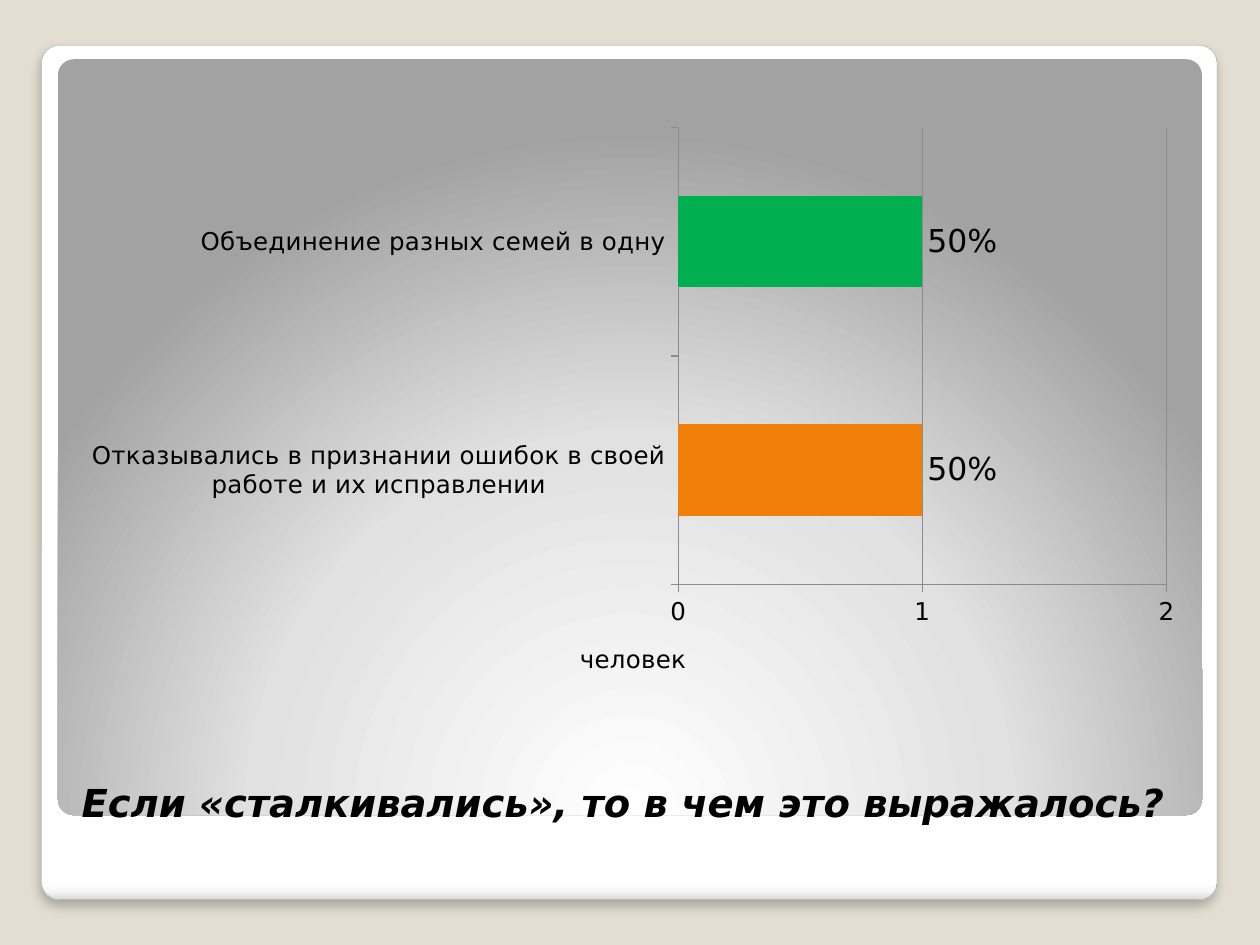
from lxml import etree
from pptx import Presentation
from pptx.chart.data import CategoryChartData
from pptx.dml.color import RGBColor as RGB
from pptx.enum.chart import XL_CHART_TYPE as CT, XL_LABEL_POSITION as LP, XL_TICK_MARK as TM
from pptx.enum.shapes import MSO_SHAPE as SHAPE
from pptx.enum.text import MSO_ANCHOR as ANCHOR
from pptx.oxml.ns import nsdecls
from pptx.util import Inches, Pt

THEME = {
    "font": "DejaVu Sans", "title": Pt(22), "label": Pt(18), "axis": Pt(14),
    "text": RGB(0, 0, 0), "bg": RGB.from_string("E3DED1"),
    "edge": RGB.from_string("A4A4A4"), "grid": RGB.from_string("8B8B8B"),
    "orange": RGB.from_string("F07F09"), "green": RGB.from_string("00B050"),
    "frame": [(0, "FFFFFF"), (98, "FFFFFF"), (99, "F7F7F7"), (100, "DADADA")],
    "panel": [(0, "FFFFFF"), (55, "E1E1E1"), (100, "A2A2A2")],
}
LINEAR = '<a:lin ang="5400000" scaled="0"/>'
RADIAL = ('<a:path path="circle"><a:fillToRect l="50000" t="175000" '
          'r="50000" b="-75000"/></a:path>')


def add_card(box, stops, direction):
    sp = s.shapes.add_shape(SHAPE.ROUNDED_RECTANGLE, *map(Inches, box))
    sp.adjustments[0] = 0.021
    sp.shadow.inherit = False
    sp.line.fill.background()
    gs = "".join(f'<a:gs pos="{pos * 1000}"><a:srgbClr val="{color}"/></a:gs>'
                 for pos, color in stops)
    grad = etree.fromstring(f'<a:gradFill {nsdecls("a")} rotWithShape="1">'
                            f'<a:gsLst>{gs}</a:gsLst>{direction}</a:gradFill>')
    sp._element.spPr.find("{*}prstGeom").addnext(grad)
    return sp


def style_font(font, size, **extra):
    values = {"name": THEME["font"], "size": THEME[size], **extra}
    for name, value in values.items():
        setattr(font, name, value)
    font.color.rgb = THEME["text"]


prs = Presentation()
prs.slide_width, prs.slide_height = Inches(10), Inches(7.5)
s = prs.slides.add_slide(prs.slide_layouts[6])
s.background.fill.solid()
s.background.fill.fore_color.rgb = THEME["bg"]

frame = add_card((0.33, 0.36, 9.33, 6.78), THEME["frame"], LINEAR)
frame.line.color.rgb = THEME["edge"]
frame.line.width = Pt(0.16)
frame._element.spPr.find("{*}effectLst").append(etree.fromstring(
    f'<a:outerShdw {nsdecls("a")} blurRad="{Pt(6)}" dist="{Pt(4)}" dir="5400000" '
    'algn="t" rotWithShape="0"><a:srgbClr val="000000"><a:alpha val="25000"/>'
    '</a:srgbClr></a:outerShdw>'))
add_card((0.46, 0.47, 9.08, 6), THEME["panel"], RADIAL)

title = s.shapes.add_textbox(Inches(0.55), Inches(5.88), Inches(8.95), Inches(0.72))
tf = title.text_frame
tf.word_wrap = True
tf.vertical_anchor = ANCHOR.BOTTOM
r = tf.paragraphs[0].add_run()
r.text = "Если «сталкивались», то в чем это выражалось?"
style_font(r.font, "title", bold=True, italic=True)

data = CategoryChartData()
data.categories = ["Отказывались в признании ошибок в своей работе и их исправлении",
                   "Объединение разных семей в одну"]
data.add_series("Series 1", [1, 1])
chart = s.shapes.add_chart(CT.BAR_CLUSTERED, Inches(0.55), Inches(0.92),
                           Inches(8.95), Inches(4.65), data).chart
chart.has_legend = chart.has_title = False
style_font(chart.font, "label")

plot = chart.plots[0]
plot.gap_width = 150
plot.vary_by_categories = False
series = plot.series[0]
for i, color in enumerate(["orange", "green"]):
    point = series.points[i]
    point.format.fill.solid()
    point.format.fill.fore_color.rgb = THEME[color]
    r = point.data_label.text_frame.paragraphs[0].add_run()
    r.text = "50%"
    style_font(r.font, "label")
    point.data_label.position = LP.OUTSIDE_END

cat_axis, val_axis = chart.category_axis, chart.value_axis
for axis in (cat_axis, val_axis):
    axis.major_tick_mark = TM.OUTSIDE
    axis.minor_tick_mark = TM.NONE
    axis.format.line.color.rgb = THEME["grid"]
    style_font(axis.tick_labels.font, "axis", bold=False)
cat_axis.has_major_gridlines = False
val_axis.has_major_gridlines = True
val_axis.major_gridlines.format.line.color.rgb = THEME["grid"]
val_axis.major_unit = 1
r = val_axis.axis_title.text_frame.paragraphs[0].add_run()
r.text = "человек"
style_font(r.font, "axis", bold=False)

prs.save("out.pptx")
